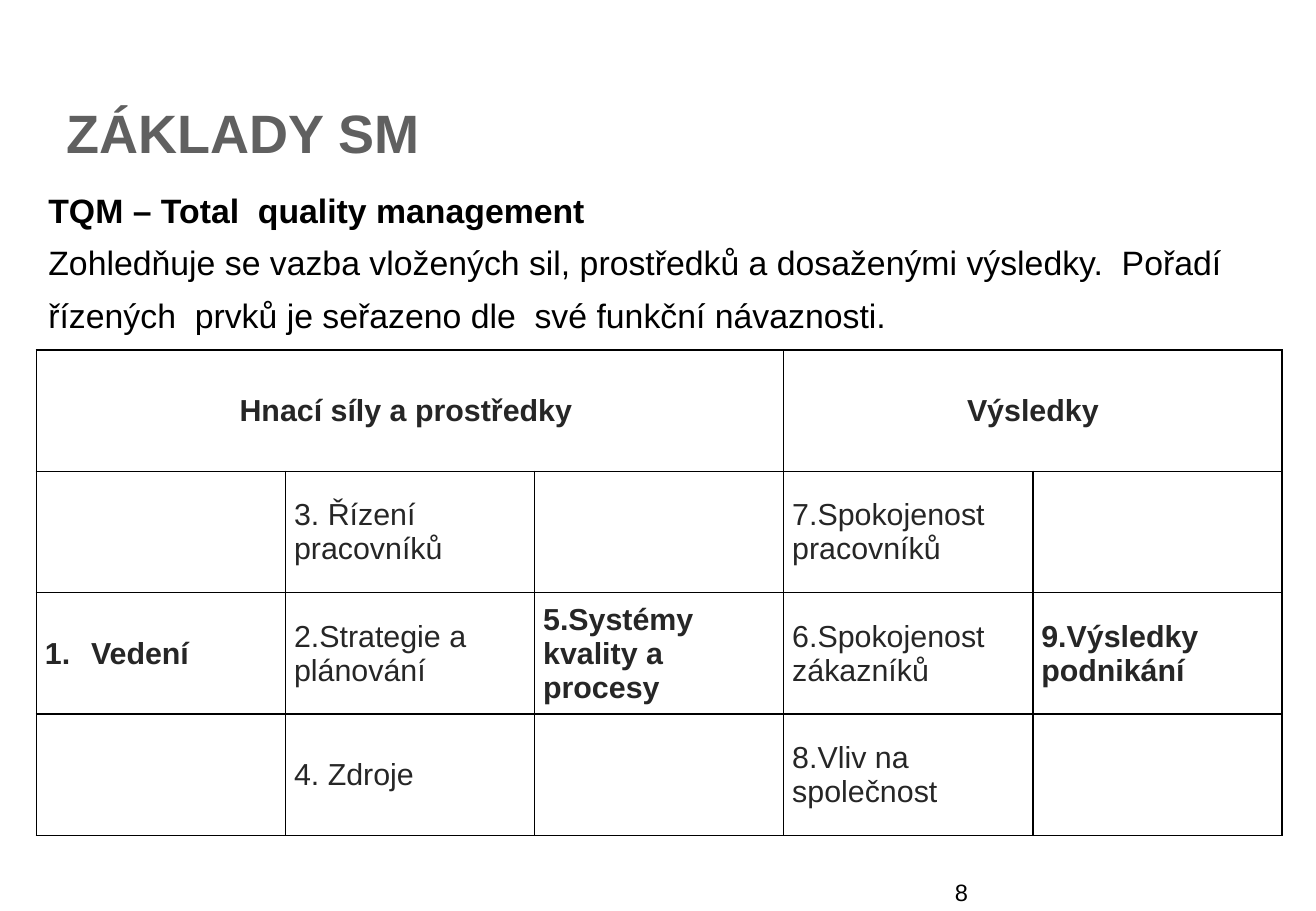
"""Build the TQM slide with its table of driving forces and results."""
from dataclasses import dataclass, field

import pptx
import pptx.dml.color
import pptx.enum.text
import pptx.oxml
import pptx.oxml.ns
import pptx.util

ANCHOR = pptx.enum.text.MSO_ANCHOR
ALIGN = pptx.enum.text.PP_ALIGN
WIDTH, HEIGHT = 10.83, 7.5
COLUMN, ROW = 2.05, 1.0


@dataclass(frozen=True)
class Theme:
    font: str = "Arial"
    title: str = "606060"
    ink: str = "000000"
    cell: str = "262626"
    border: str = "000000"
    title_size: int = 32
    body_size: int = 20
    cell_size: int = 18
    number_size: int = 14
    border_width: int = 1


THEME = Theme()


@dataclass(frozen=True)
class Line:
    text: str
    size: int
    color: str
    bold: bool = False
    format: dict = field(default_factory=dict)


@dataclass(frozen=True)
class Box:
    left: float
    top: float
    width: float
    height: float
    lines: list[Line]
    format: dict = field(default_factory=dict)


@dataclass(frozen=True)
class Entry:
    row: int
    col: int
    text: str
    bold: bool = False
    span: int = 1
    align: ALIGN = ALIGN.LEFT
    numbered: bool = False


SPACED = {"line_spacing": 1.3}
BOXES = [
    Box(0.46, 0.72, 9.21, 0.74,
        [Line("ZÁKLADY SM", THEME.title_size, THEME.title, True)],
        {"vertical_anchor": ANCHOR.MIDDLE, "margin_left": pptx.util.Inches(0.09)}),
    Box(0.3, 1.41, 10.47, 2.58,
        [Line("TQM – Total  quality management",
              THEME.body_size, THEME.ink, True, SPACED),
         Line("Zohledňuje se vazba vložených sil, prostředků a dosaženými výsledky.  "
              "Pořadí řízených  prvků je seřazeno dle  své funkční návaznosti.",
              THEME.body_size, THEME.ink, False, SPACED)]),
    Box(7.76, 7.18, 2.53, 0.17, [Line("8", THEME.number_size, THEME.ink)]),
]
ENTRIES = [
    Entry(0, 0, "Hnací síly a prostředky ", True, 3, ALIGN.CENTER),
    Entry(0, 3, "Výsledky", True, 2, ALIGN.CENTER),
    Entry(1, 1, "3. Řízení pracovníků"),
    Entry(1, 3, "7.Spokojenost pracovníků"),
    Entry(2, 0, "Vedení", True, numbered=True),
    Entry(2, 1, "2.Strategie a plánování"),
    Entry(2, 2, "5.Systémy kvality a procesy ", True),
    Entry(2, 3, "6.Spokojenost zákazníků"),
    Entry(2, 4, "9.Výsledky podnikání", True),
    Entry(3, 1, "4. Zdroje"),
    Entry(3, 3, "8.Vliv na společnost"),
]


def apply(target: object, values: dict) -> None:
    for name, value in values.items():
        setattr(target, name, value)


def write(p, line: Line) -> None:
    apply(p, line.format)
    r = p.add_run()
    r.text = line.text
    apply(r.font, {"name": THEME.font, "size": pptx.util.Pt(line.size),
                   "bold": line.bold})
    r.font.color.rgb = pptx.dml.color.RGBColor.from_string(line.color)


def add_box(s, box: Box) -> None:
    sp = s.shapes.add_textbox(*map(pptx.util.Inches,
                                   (box.left, box.top, box.width, box.height)))
    tf = sp.text_frame
    apply(tf, {"word_wrap": True, **box.format})
    for i, line in enumerate(box.lines):
        write(tf.add_paragraph() if i else tf.paragraphs[0], line)


def add_borders(cell) -> None:
    pr = cell._tc.get_or_add_tcPr()
    for i, side in enumerate("LRTB"):
        pr.insert(i, pptx.oxml.parse_xml(
            f'<a:ln{side} {pptx.oxml.ns.nsdecls("a")} '
            f'w="{pptx.util.Pt(THEME.border_width)}"><a:solidFill>'
            f'<a:srgbClr val="{THEME.border}"/></a:solidFill></a:ln{side}>'))


def add_number(p, indent: float) -> None:
    pr = p._p.get_or_add_pPr()
    apply_indent = pptx.util.Inches(indent)
    pr.set("marL", str(apply_indent))
    pr.set("indent", str(-apply_indent))
    pr.append(pptx.oxml.parse_xml(
        f'<a:buAutoNum {pptx.oxml.ns.nsdecls("a")} type="arabicPeriod"/>'))


def add_table(s, left: float, top: float, rows: int, cols: int) -> None:
    table = s.shapes.add_table(rows, cols, *map(
        pptx.util.Inches, (left, top, cols * COLUMN, rows * ROW))).table
    apply(table, {"first_row": False, "horz_banding": False})
    side = pptx.util.Inches(0.07)
    for cell in table.iter_cells():
        cell.fill.background()
        add_borders(cell)
        apply(cell, {"vertical_anchor": ANCHOR.MIDDLE, "margin_left": side,
                     "margin_right": side, "margin_top": 0, "margin_bottom": 0})
    for e in ENTRIES:
        cell = table.cell(e.row, e.col)
        if e.span > 1:
            cell.merge(table.cell(e.row, e.col + e.span - 1))
        p = cell.text_frame.paragraphs[0]
        if e.numbered:
            add_number(p, 0.38)
        write(p, Line(e.text, THEME.cell_size, THEME.cell, e.bold,
                      {"alignment": e.align}))


def main() -> None:
    prs = pptx.Presentation()
    apply(prs, {"slide_width": pptx.util.Inches(WIDTH),
                "slide_height": pptx.util.Inches(HEIGHT)})
    s = prs.slides.add_slide(prs.slide_layouts[6])
    for box in BOXES:
        add_box(s, box)
    add_table(s, 0.3, 2.88, 4, 5)
    prs.save("out.pptx")


if __name__ == "__main__":
    main()
